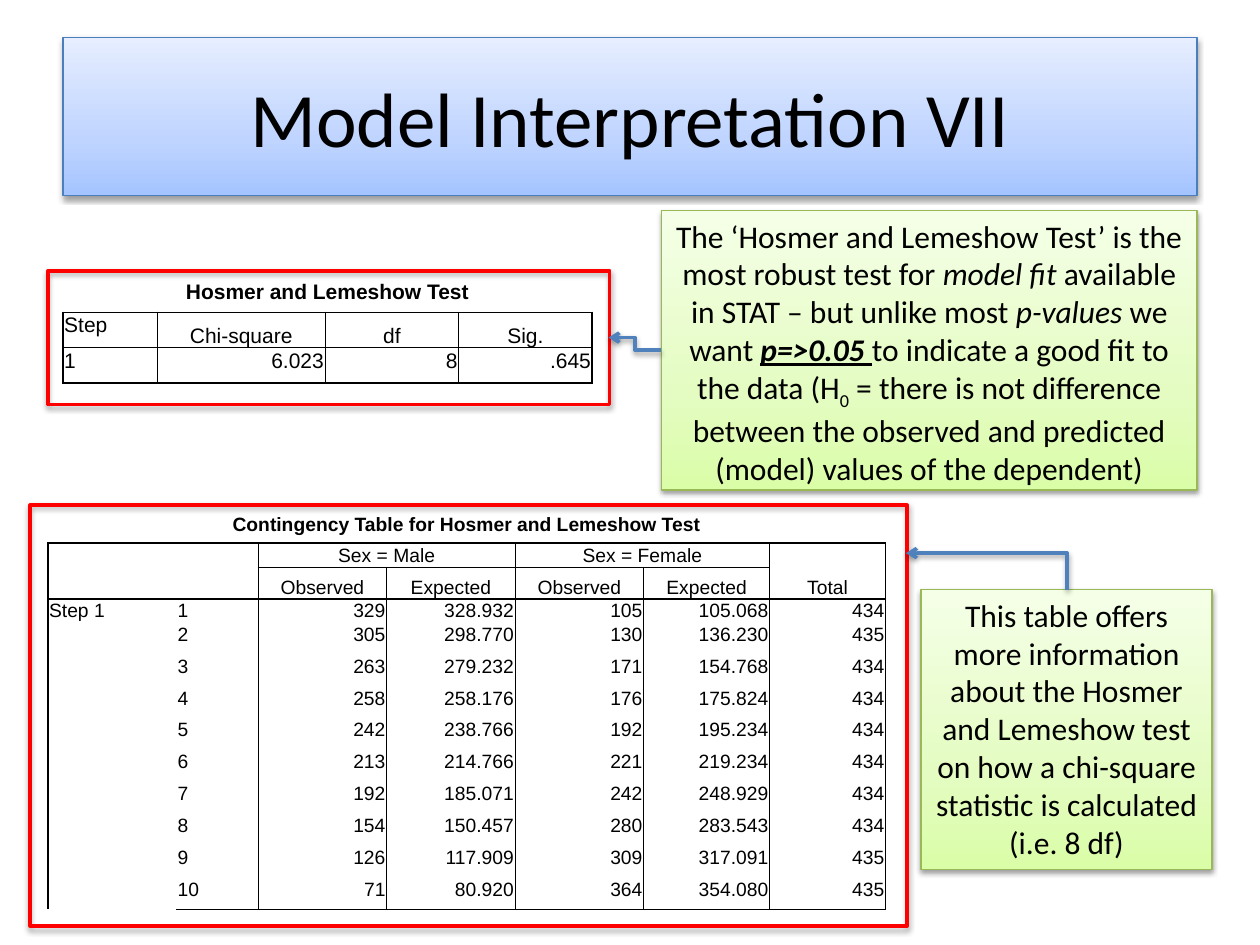
import copy
import dataclasses

import pptx
import pptx.dml.color
import pptx.enum.shapes
import pptx.enum.text
import pptx.oxml
import pptx.oxml.ns
import pptx.util
from lxml import etree

Inches = pptx.util.Inches
Pt = pptx.util.Pt
qn = pptx.oxml.ns.qn
RGB = pptx.dml.color.RGBColor.from_string
ALIGN = pptx.enum.text.PP_ALIGN
ANCHOR = pptx.enum.text.MSO_ANCHOR


@dataclasses.dataclass(frozen=True)
class Theme:
    body_font: str = "Calibri"
    table_font: str = "Arial"
    ink: str = "000000"
    blue: tuple = ("A4C4FF", "BFD4FF", "E6EEFF")
    blue_line: str = "4B7EBC"
    green: tuple = ("DAFDA7", "E4FCC2", "F5FFE7")
    green_line: str = "98B955"
    frame: str = "FF0000"
    arrow: str = "4F81BD"
    title_size: int = 44
    note_size: int = 18
    test_size: int = 12
    contingency_size: int = 11
    no_table_style: str = "{2D5ABB26-0587-4C30-8999-92F81FD0307C}"


T = Theme()


def style_run(r, font, size, bold=False, italic=False, underline=False, base=0):
    r.font.name = font
    r.font.size = Pt(size)
    r.font.color.rgb = RGB(T.ink)
    r.font.bold = bold
    r.font.italic = italic
    r.font.underline = underline
    if base:
        r.font._element.set("baseline", str(base * 1000))


def add_shadow(sp, alpha=38):
    spPr = sp._element.spPr
    for old in spPr.findall(qn("a:effectLst")):
        spPr.remove(old)
    effects = etree.SubElement(spPr, qn("a:effectLst"))
    shadow = etree.SubElement(effects, qn("a:outerShdw"), blurRad="40000",
                              dist="20000", dir="5400000", rotWithShape="0")
    color = etree.SubElement(shadow, qn("a:srgbClr"), val=T.ink)
    etree.SubElement(color, qn("a:alpha"), val=str(alpha * 1000))


def add_box(s, box, line, width):
    sp = s.shapes.add_shape(pptx.enum.shapes.MSO_SHAPE.RECTANGLE, *map(Inches, box))
    sp.fill.background()
    sp.line.color.rgb = RGB(line)
    sp.line.width = Pt(width)
    return sp


def add_panel(s, box, colors, line, parts, size, anchor):
    sp = add_box(s, box, line, 0.75)
    sp.fill.gradient()
    sp.fill.gradient_angle = 90
    stops = sp._element.spPr.find(".//" + qn("a:gsLst"))
    stops.insert(1, copy.deepcopy(stops[0]))
    for stop, position, color in zip(sp.fill.gradient_stops, (0, 0.35, 1), colors):
        stop.position = position
        stop.color.rgb = RGB(color)
    add_shadow(sp)
    tf = sp.text_frame
    tf.word_wrap = True
    tf.vertical_anchor = anchor
    p = tf.paragraphs[0]
    p.alignment = ALIGN.CENTER
    for text, style in parts:
        r = p.add_run()
        r.text = text
        style_run(r, T.body_font, size, **style)
    return sp


def add_title(s, box, text):
    add_panel(s, box, T.blue, T.blue_line, [(text, {})], T.title_size, ANCHOR.MIDDLE)


def add_note(s, box, parts):
    sp = add_panel(s, box, T.green, T.green_line, parts, T.note_size, ANCHOR.TOP)
    sp.text_frame.auto_size = pptx.enum.text.MSO_AUTO_SIZE.SHAPE_TO_FIT_TEXT


def add_frame(s, box):
    add_shadow(add_box(s, box, T.frame, 2), alpha=35)


def add_arrow(s, start, end, corner=False):
    (x1, y1), (x2, y2) = start, end
    if corner:
        cx, cy = (x1 + x2) / 2, (y1 + y2) / 2
        w, h = y1 - y2, x1 - x2
        x1, y1, x2, y2 = cx - w / 2, cy + h / 2, cx + w / 2, cy - h / 2
    cn = s.shapes.add_connector(pptx.enum.shapes.MSO_CONNECTOR.ELBOW,
                                *map(Inches, (x1, y1, x2, y2)))
    cn.line.color.rgb = RGB(T.arrow)
    cn.line.width = Pt(2)
    spPr = cn._element.spPr
    if corner:
        spPr.find(qn("a:prstGeom")).set("prst", "bentConnector2")
        spPr.find(qn("a:xfrm")).set("rot", "16200000")
    etree.SubElement(spPr.find(qn("a:ln")), qn("a:tailEnd"), type="arrow")
    add_shadow(cn)


def set_border(cell, side, width):
    ln = etree.SubElement(cell._tc.get_or_add_tcPr(), qn("a:ln" + side),
                          w=str(int(Pt(width))))
    if width:
        fill = etree.SubElement(ln, qn("a:solidFill"))
        etree.SubElement(fill, qn("a:srgbClr"), val=T.ink)
    else:
        etree.SubElement(ln, qn("a:noFill"))


def format_cell(cell, text, size, align, anchor, bold):
    cell.margin_left = cell.margin_right = cell.margin_top = Inches(0.01)
    cell.margin_bottom = 0
    cell.vertical_anchor = anchor
    cell.fill.background()
    p = cell.text_frame.paragraphs[0]
    p.text = text
    p.alignment = align
    for r in p.runs:
        style_run(r, T.table_font, size, bold)
    etree.SubElement(p._p, qn("a:endParaRPr"), sz=str(size * 100))


def add_stats_table(s, box, cols, heights, rows, spans, size, stub, head):
    n_rows, n_cols = len(rows), len(cols)
    table = s.shapes.add_table(n_rows, n_cols, *map(Inches, box)).table
    table.first_row = table.horz_banding = False
    table._tbl.tblPr.find(qn("a:tableStyleId")).text = T.no_table_style
    for column, width in zip(table.columns, cols):
        column.width = Inches(width)
    for row, height in zip(table.rows, heights):
        row.height = Inches(height)

    def vertical(r, c):
        if r == 0 or 0 < c < stub:
            return 0
        return 1 if c in (0, stub, n_cols) else 0.5

    def horizontal(r):
        if r in (1, head, n_rows):
            return 1
        return 0.5 if 1 < r < head else 0

    for r, texts in enumerate(rows):
        for c, text in enumerate(texts):
            top, left, bottom, right = next(
                (a for a in spans if a[0] <= r < a[2] and a[1] <= c < a[3]),
                (r, c, r + 1, c + 1))
            cell = table.cell(r, c)
            set_border(cell, "L", vertical(r, c) if c == left else 0)
            set_border(cell, "R", vertical(r, c + 1) if c + 1 == right else 0)
            set_border(cell, "T", horizontal(r) if r == top else 0)
            set_border(cell, "B", horizontal(r + 1) if r + 1 == bottom else 0)
            if r == 0:
                align, anchor = ALIGN.CENTER, ANCHOR.MIDDLE
            elif c < stub:
                align, anchor = ALIGN.LEFT, ANCHOR.TOP
            elif r < head:
                align, anchor = ALIGN.CENTER, ANCHOR.BOTTOM
            else:
                align, anchor = ALIGN.RIGHT, ANCHOR.TOP
            format_cell(cell, text, size, align, anchor, r == 0)
    for top, left, bottom, right in spans:
        table.cell(top, left).merge(table.cell(bottom - 1, right - 1))


def add_test_table(s, box):
    rows = [["Hosmer and Lemeshow Test", "", "", ""],
            ["Step", "Chi-square", "df", "Sig."],
            ["1", "6.023", "8", ".645"]]
    add_stats_table(s, box, [0.75, 1.33, 1.06, 1.06], [0.33, 0.28, 0.28], rows,
                    [(0, 0, 1, 4)], T.test_size, stub=1, head=2)


def add_contingency_table(s, box):
    counts = """329 328.932 105 105.068 434
305 298.770 130 136.230 435
263 279.232 171 154.768 434
258 258.176 176 175.824 434
242 238.766 192 195.234 434
213 214.766 221 219.234 434
192 185.071 242 248.929 434
154 150.457 280 283.543 434
126 117.909 309 317.091 435
71 80.920 364 354.080 435""".splitlines()
    rows = [["Contingency Table for Hosmer and Lemeshow Test"] + [""] * 6,
            ["", "", "Sex = Male", "", "Sex = Female", "", "Total"],
            ["", ""] + ["Observed", "Expected"] * 2 + [""]]
    rows += [["Step 1" if i == 1 else "", str(i)] + line.split()
             for i, line in enumerate(counts, 1)]
    spans = [(0, 0, 1, 7), (1, 0, 3, 2), (1, 2, 2, 4), (1, 4, 2, 6),
             (1, 6, 3, 7), (3, 0, 13, 1)]
    tall = (box[3] - 0.3 - 2 * 0.19) / 10
    add_stats_table(s, box, [1.02, 0.65, 1.02, 1.02, 1.02, 1, 0.92],
                    [0.3, 0.19, tall, 0.19] + [tall] * 9, rows, spans,
                    T.contingency_size, stub=2, head=3)


def main():
    prs = pptx.Presentation()
    prs.slide_width, prs.slide_height = Inches(10), Inches(7.5)
    s = prs.slides.add_slide(prs.slide_layouts[6])
    add_title(s, (0.5, 0.3, 9, 1.25), "Model Interpretation VII")
    add_contingency_table(s, (0.38, 4.01, 6.67, 3.21))
    add_test_table(s, (0.5, 2.15, 4.19, 0.89))
    add_note(s, (5.25, 1.67, 4.25, 2.22), [
        ("The ‘Hosmer and Lemeshow Test’ is the most robust test for ", {}),
        ("model fit", {"italic": True}),
        (" available in STAT – but unlike most ", {}),
        ("p-values", {"italic": True}),
        (" we want ", {}),
        ("p=>0.05", {"bold": True, "italic": True, "underline": True}),
        (" ", {"bold": True, "underline": True}),
        ("to indicate a good fit to the data (H", {}),
        ("0", {"base": -25}),
        (" = there is not difference between the observed and predicted "
         "(model) values of the dependent)", {})])
    add_frame(s, (0.38, 2.15, 4.46, 1.06))
    add_arrow(s, (5.25, 2.78), (4.83, 2.68))
    add_note(s, (7.31, 4.68, 2.31, 2.22), [
        ("This table offers more information about the Hosmer and Lemeshow test "
         "on how a chi-square statistic is calculated (i.e. 8 df)", {})])
    add_frame(s, (0.24, 4.01, 6.96, 3.34))
    add_arrow(s, (8.47, 4.68), (7.19, 4.39), corner=True)
    prs.save("out.pptx")


if __name__ == "__main__":
    main()
